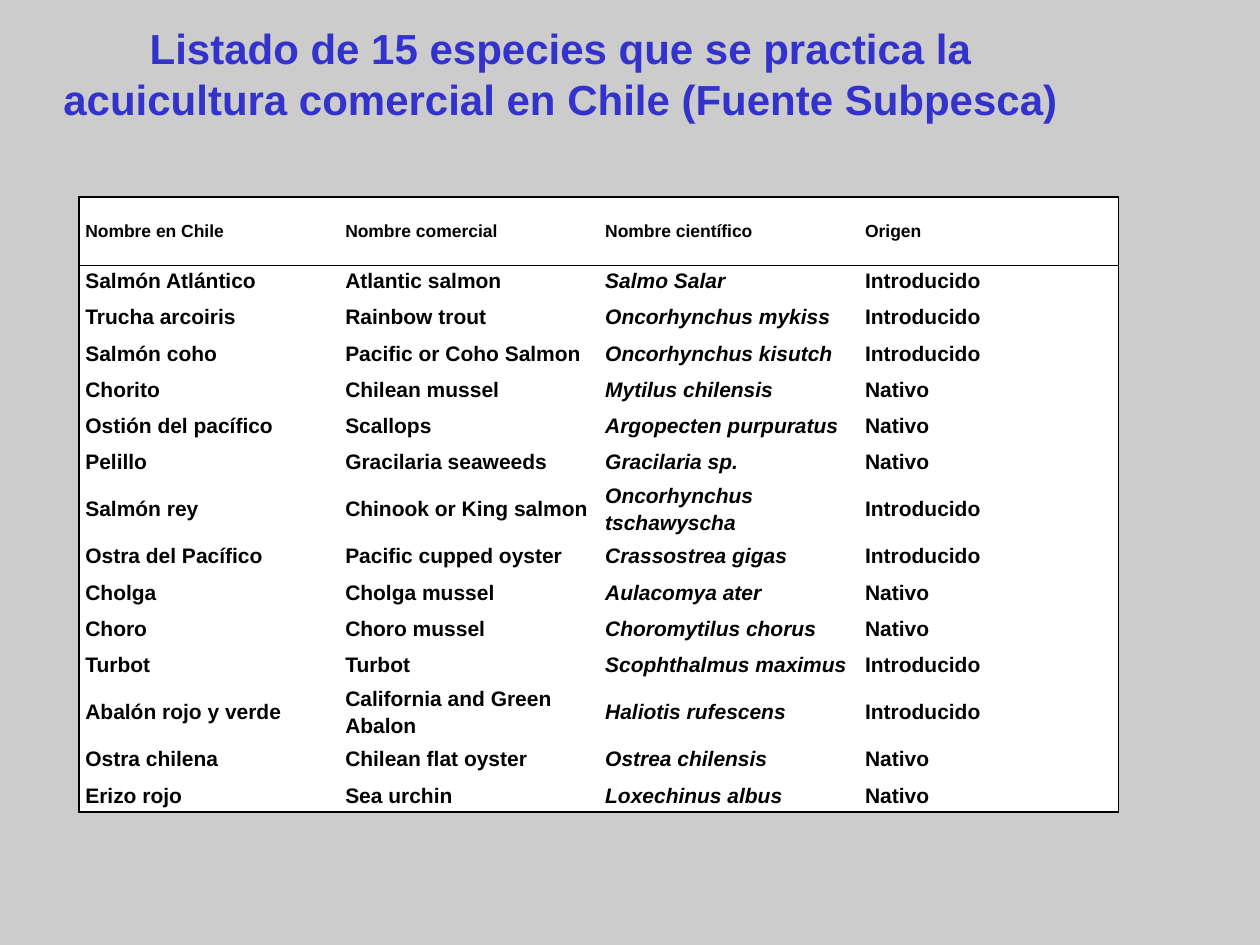
from lxml.etree import SubElement
from pptx import Presentation
from pptx.dml.color import RGBColor
from pptx.enum.text import MSO_ANCHOR as Anchor, MSO_AUTO_SIZE as AutoSize, PP_ALIGN as Align
from pptx.oxml.ns import qn
from pptx.util import Cm, Pt

COLORS = {"background": "CCCCCC", "title": "3333CC", "text": "000000",
          "cell": "FFFFFF", "border": "000000"}
FONT = "Arial"
TITLE = ("Listado de 15 especies que se practica la acuicultura comercial "
         "en Chile (Fuente Subpesca)")
SPECIES = [
    ("Nombre en Chile", "Nombre comercial", "Nombre científico", "Origen"),
    ("Salmón Atlántico", "Atlantic salmon", "Salmo Salar", "Introducido"),
    ("Trucha arcoiris", "Rainbow trout", "Oncorhynchus mykiss", "Introducido"),
    ("Salmón coho", "Pacific or Coho Salmon", "Oncorhynchus kisutch", "Introducido"),
    ("Chorito", "Chilean mussel", "Mytilus chilensis", "Nativo"),
    ("Ostión del pacífico", "Scallops", "Argopecten purpuratus", "Nativo"),
    ("Pelillo", "Gracilaria seaweeds", "Gracilaria sp.", "Nativo"),
    ("Salmón rey", "Chinook or King salmon", "Oncorhynchus tschawyscha", "Introducido"),
    ("Ostra del Pacífico", "Pacific cupped oyster", "Crassostrea gigas", "Introducido"),
    ("Cholga", "Cholga mussel", "Aulacomya ater", "Nativo"),
    ("Choro", "Choro mussel", "Choromytilus chorus", "Nativo"),
    ("Turbot", "Turbot", "Scophthalmus maximus", "Introducido"),
    ("Abalón rojo y verde", "California and Green Abalon", "Haliotis rufescens", "Introducido"),
    ("Ostra chilena", "Chilean flat oyster", "Ostrea chilensis", "Nativo"),
    ("Erizo rojo", "Sea urchin", "Loxechinus albus", "Nativo"),
]
HEADER_HEIGHT, FIRST_HEIGHT, ROW_HEIGHT, TALL_HEIGHT = 1.38, 0.65, 0.73, 1.17
TALL_ROWS = (7, 12)
COLUMN_WIDTH = 5.24
SCIENTIFIC_COLUMN = 2


def rgb(name):
    return RGBColor.from_string(COLORS[name])


def write_text(frame, text, size=12, color="text", italic=False, align=Align.LEFT, spacing=1.0):
    para = frame.paragraphs[0]
    para.alignment = align
    para.line_spacing = spacing
    span = para.add_run()
    span.text = text
    font = span.font
    font.name, font.size, font.bold, font.italic = FONT, Pt(size), True, italic
    font.color.rgb = rgb(color)


def set_borders(cell, sides):
    properties = cell._tc.get_or_add_tcPr()
    for side in "LRTB":
        line = SubElement(properties, qn(f"a:ln{side}"), w=str(Pt(1)))
        if side in sides:
            fill = SubElement(line, qn("a:solidFill"))
            SubElement(fill, qn("a:srgbClr"), val=COLORS["border"])
        else:
            SubElement(line, qn("a:noFill"))


def border_sides(row, column):
    last_row, last_column = len(SPECIES) - 1, len(SPECIES[0]) - 1
    rules = {"L": column == 0, "R": column == last_column,
             "T": row in (0, 1), "B": row in (0, last_row)}
    return [side for side, drawn in rules.items() if drawn]


def row_height(row):
    if row in TALL_ROWS:
        return TALL_HEIGHT
    return {0: HEADER_HEIGHT, 1: FIRST_HEIGHT}.get(row, ROW_HEIGHT)


def format_title(page):
    box = page.shapes.title
    box.left, box.top, box.width, box.height = Cm(0.58), Cm(0.33), Cm(21.44), Cm(2.31)
    frame = box.text_frame
    frame.word_wrap = True
    frame.auto_size = AutoSize.NONE
    frame.vertical_anchor = Anchor.TOP
    write_text(frame, TITLE, size=24, color="title", align=Align.CENTER)


def add_species_table(page):
    heights = [row_height(row) for row in range(len(SPECIES))]
    columns = len(SPECIES[0])
    table = page.shapes.add_table(len(SPECIES), columns, Cm(1.59), Cm(3.97),
                                  Cm(columns * COLUMN_WIDTH), Cm(sum(heights))).table
    table.first_row = table.horz_banding = False
    for column in table.columns:
        column.width = Cm(COLUMN_WIDTH)
    for row, names in enumerate(SPECIES):
        table.rows[row].height = Cm(heights[row])
        for column, name in enumerate(names):
            cell = table.cell(row, column)
            cell.margin_left = cell.margin_right = Cm(0.13)
            cell.margin_top = cell.margin_bottom = Cm(0)
            cell.vertical_anchor = Anchor.MIDDLE
            set_borders(cell, border_sides(row, column))
            cell.fill.solid()
            cell.fill.fore_color.rgb = rgb("cell")
            write_text(cell.text_frame, name, size=12 if row else 10,
                       italic=row > 0 and column == SCIENTIFIC_COLUMN,
                       spacing=1.15 if row > 1 else 1.0)


def main():
    deck = Presentation()
    deck.slide_width, deck.slide_height = Cm(25.4), Cm(19.05)
    page = deck.slides.add_slide(deck.slide_layouts[5])
    page.background.fill.solid()
    page.background.fill.fore_color.rgb = rgb("background")
    add_species_table(page)
    format_title(page)
    deck.save("out.pptx")


if __name__ == "__main__":
    main()
